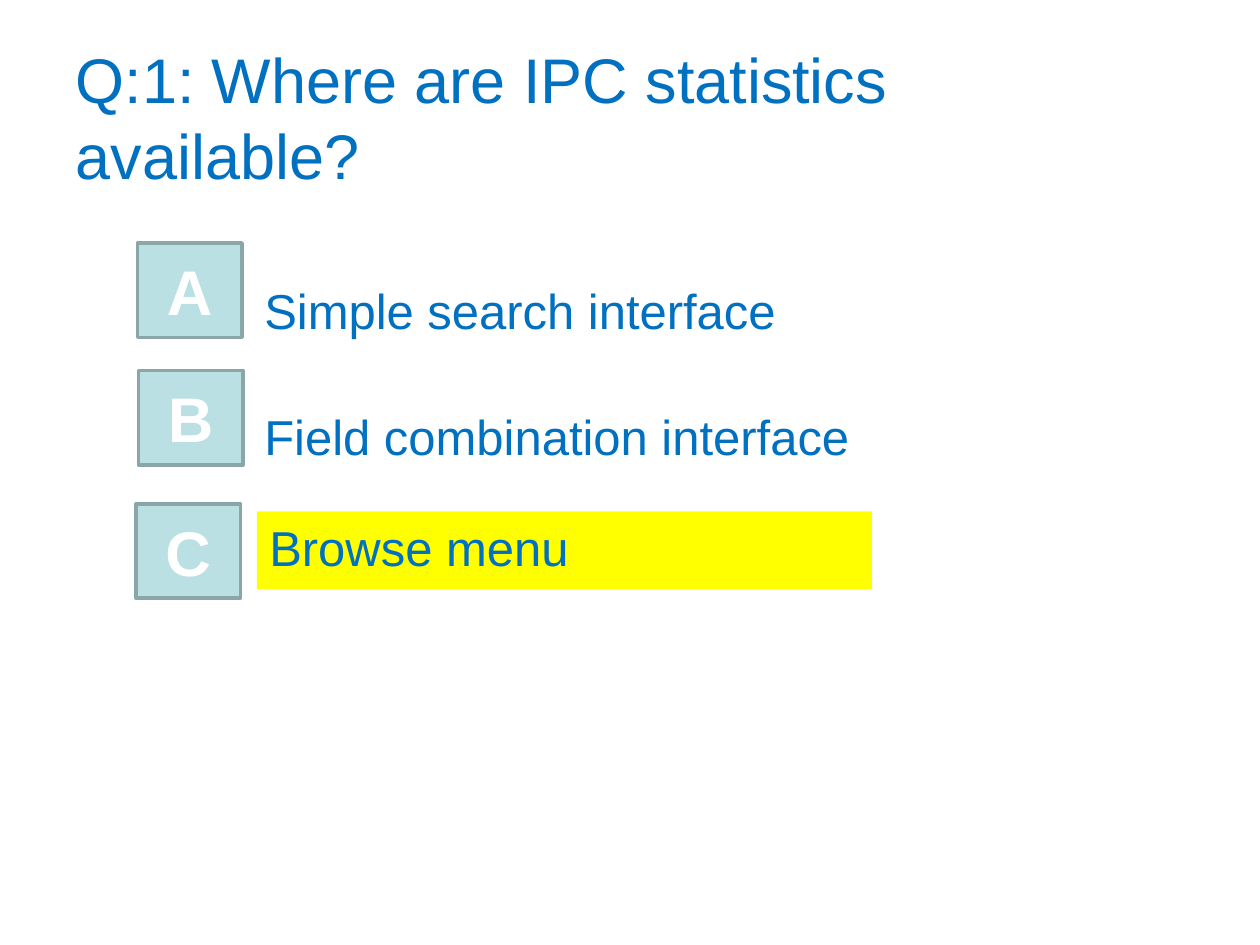
from pptx import Presentation
from pptx.dml.color import RGBColor
from pptx.enum.shapes import MSO_SHAPE
from pptx.enum.text import MSO_ANCHOR, PP_ALIGN
from pptx.util import Cm, Pt

BLUE = RGBColor(0x00, 0x70, 0xC0)
WHITE = RGBColor(0xFF, 0xFF, 0xFF)
YELLOW = RGBColor(0xFF, 0xFF, 0x00)
AQUA = RGBColor(0xBB, 0xE0, 0xE3)
GREY = RGBColor(0x8A, 0xA6, 0xA8)
BUTTON = MSO_SHAPE.ACTION_BUTTON_CUSTOM
RECT = MSO_SHAPE.RECTANGLE
LEFT, CENTER = PP_ALIGN.LEFT, PP_ALIGN.CENTER
TOP, MIDDLE = MSO_ANCHOR.TOP, MSO_ANCHOR.MIDDLE


class Quiz:
    """Builds a quiz slide with a question, lettered buttons and answers."""

    def __init__(self, deck):
        self.font = "Arial"
        self.slide = deck.slides.add_slide(deck.slide_layouts[5])

    def label(self, shape, text, size, color, align=LEFT, anchor=TOP, bold=False):
        frame = shape.text_frame
        frame.text = text
        frame.word_wrap = True
        frame.vertical_anchor = anchor
        line = frame.paragraphs[0]
        line.alignment = align
        font = line.runs[0].font
        font.name, font.size, font.bold = self.font, Pt(size), bold
        font.color.rgb = color

    def title(self, text, x, y, w, h):
        shape = self.slide.shapes.title
        shape.left, shape.top, shape.width, shape.height = Cm(x), Cm(y), Cm(w), Cm(h)
        self.label(shape, text, 36, BLUE, anchor=MIDDLE)

    def block(self, kind, x, y, w, h, fill):
        shape = self.slide.shapes.add_shape(kind, Cm(x), Cm(y), Cm(w), Cm(h))
        shape.shadow.inherit = False
        shape.fill.solid()
        shape.fill.fore_color.rgb = fill
        shape.line.fill.background()
        return shape

    def button(self, text, x, y):
        shape = self.block(BUTTON, x, y, 2.11, 1.9, AQUA)
        shape.line.color.rgb = GREY
        shape.line.width = Pt(2)
        self.label(shape, text, 36, WHITE, CENTER, MIDDLE, True)

    def answer(self, text, x, y, w, h, fill=None):
        if fill is None:
            shape = self.slide.shapes.add_textbox(Cm(x), Cm(y), Cm(w), Cm(h))
        else:
            shape = self.block(RECT, x, y, w, h, fill)
        self.label(shape, text, 28, BLUE)


def main():
    deck = Presentation()
    deck.slide_width, deck.slide_height = Cm(25.4), Cm(19.05)
    quiz = Quiz(deck)
    quiz.title("Q:1: Where are IPC statistics available?", 1.27, 0.76, 22.86, 3.18)
    quiz.answer("Simple search interface", 5.08, 5.54, 13.54, 1.4)
    quiz.answer("Browse menu", 5.18, 10.31, 12.4, 1.57, YELLOW)
    quiz.answer("Field combination interface", 5.08, 8.08, 13.97, 1.45)
    for letter, x, y in (("A", 2.77, 4.9), ("B", 2.79, 7.47), ("C", 2.74, 10.16)):
        quiz.button(letter, x, y)
    deck.save("out.pptx")


if __name__ == "__main__":
    main()
